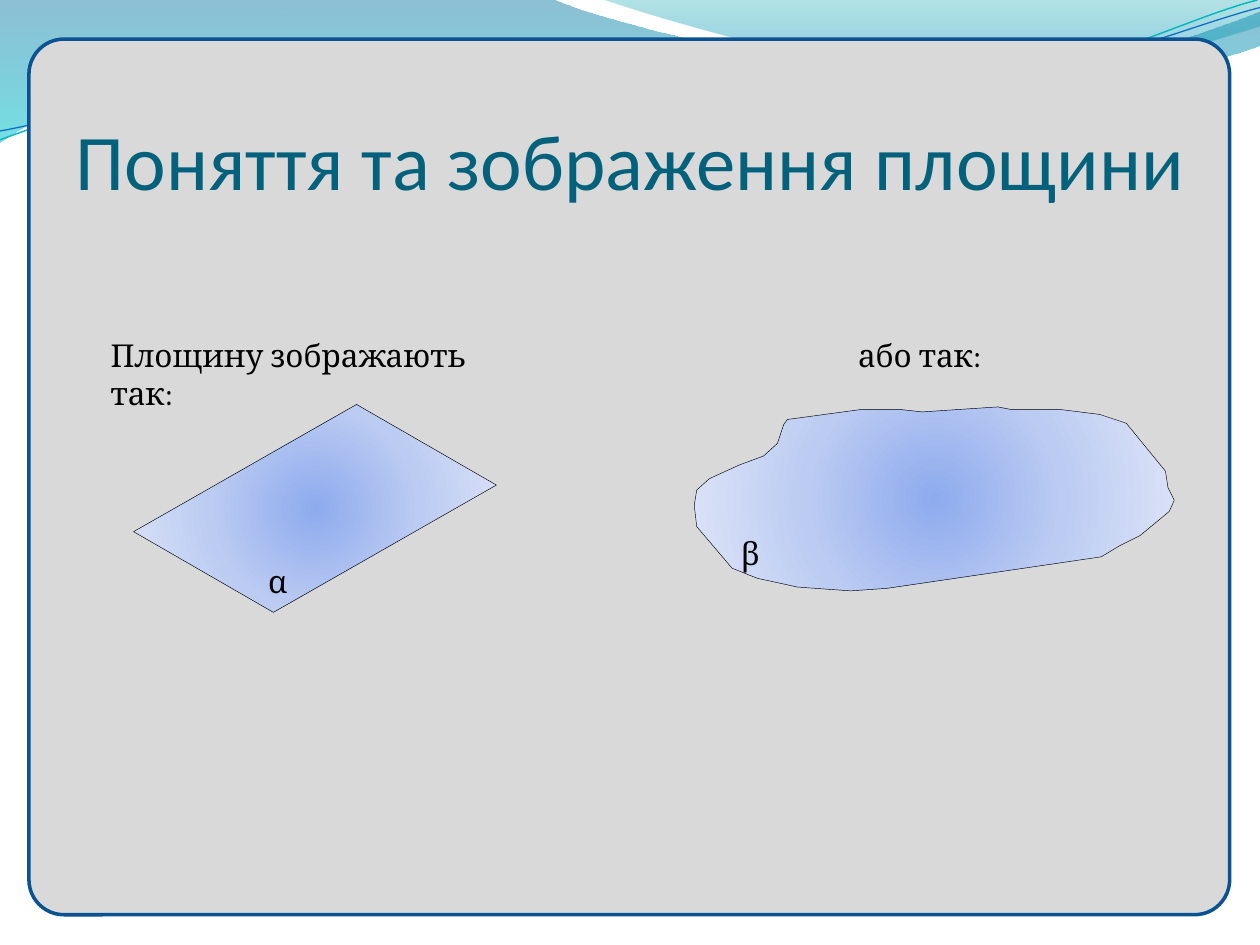
from dataclasses import dataclass

from lxml.etree import SubElement as Sub
from pptx import Presentation
from pptx.dml.color import RGBColor as Rgb
from pptx.enum.shapes import MSO_SHAPE as Kind
from pptx.enum.text import MSO_ANCHOR as Anchor, PP_ALIGN as Align
from pptx.oxml.ns import qn
from pptx.util import Inches, Pt

Point = tuple[float, float]
Stop = tuple[int, str, int]


@dataclass(frozen=True)
class Theme:
    panel: str = "D9D9D9"
    frame: str = "0B5292"
    title: str = "04617B"
    ink: str = "000000"
    teal: str = "0AB8BF"
    blue: str = "0F6FC6"
    deep: tuple[Stop, ...] = ((0, "0074A1", 45), (100, "00C6CF", 55))
    pale: tuple[Stop, ...] = ((0, "00A1A9", 30), (80, "008BBF", 45))
    plane: tuple[Stop, ...] = ((0, "8EABEE", 100), (50, "BBCBF2", 100), (100, "DEE5F8", 100))
    head: str = "Calibri"
    body: str = "Cambria"
    large: int = 45
    small: int = 18


@dataclass(frozen=True)
class Grid:
    width: int
    height: int
    cols: float = 10
    rows: float = 7.5

    def x(self, col: float) -> int:
        return round(self.width * col / self.cols)

    def y(self, row: float) -> int:
        return round(self.height * row / self.rows)


@dataclass(frozen=True)
class Form:
    points: list[Point]
    stops: tuple[Stop, ...] = ()
    round: bool = False
    line: str = ""
    weight: float = 0.25


@dataclass(frozen=True)
class Label:
    text: str
    col: float
    row: float
    wide: float
    high: float
    align: Align = Align.LEFT


def bend(*knots: Point, steps: int = 24) -> list[Point]:
    out = [knots[0]]
    for i in range(0, len(knots) - 3, 3):
        a, b, c, d = knots[i:i + 4]
        for n in range(1, steps + 1):
            t = n / steps
            u = 1 - t
            out.append(tuple(
                u**3 * a[k] + 3 * u * u * t * b[k] + 3 * u * t * t * c[k] + t**3 * d[k]
                for k in (0, 1)))
    return out


def shade(shape, stops: tuple[Stop, ...], radial: bool) -> None:
    shape.fill.gradient()
    grad = shape._element.spPr.find(qn("a:gradFill"))
    for child in list(grad):
        grad.remove(child)
    group = Sub(grad, qn("a:gsLst"))
    for spot, tint, alpha in stops:
        stop = Sub(group, qn("a:gs"), pos=str(spot * 1000))
        tone = Sub(stop, qn("a:srgbClr"), val=tint)
        if alpha < 100:
            Sub(tone, qn("a:alpha"), val=str(alpha * 1000))
    if radial:
        way = Sub(grad, qn("a:path"), {"path": "circle"})
        Sub(way, qn("a:fillToRect"), dict.fromkeys("ltrb", "50000"))
    else:
        Sub(grad, qn("a:lin"), ang="5400000", scaled="0")


def draw(slide, grid: Grid, form: Form) -> None:
    spots = [(grid.x(c), grid.y(r)) for c, r in form.points]
    pen = slide.shapes.build_freeform(*spots[0], scale=1.0)
    pen.add_line_segments(spots[1:], close=bool(form.stops))
    shape = pen.convert_to_shape()
    shape.shadow.inherit = False
    if form.stops:
        shade(shape, form.stops, form.round)
    else:
        shape.fill.background()
    if form.line:
        shape.line.color.rgb = Rgb.from_string(form.line)
        shape.line.width = Pt(form.weight)
    else:
        shape.line.fill.background()


def panel(slide, grid: Grid, theme: Theme) -> None:
    card = slide.shapes.add_shape(
        Kind.ROUNDED_RECTANGLE, grid.x(0.23), grid.y(0.31), grid.x(9.53), grid.y(6.95))
    card.adjustments[0] = 0.04
    card.shadow.inherit = False
    card.fill.solid()
    card.fill.fore_color.rgb = Rgb.from_string(theme.panel)
    card.line.color.rgb = Rgb.from_string(theme.frame)
    card.line.width = Pt(2)


def write(slide, grid: Grid, label: Label, font: str, size: int, tint: str):
    box = slide.shapes.add_textbox(
        grid.x(label.col), grid.y(label.row), grid.x(label.wide), grid.y(label.high))
    frame = box.text_frame
    frame.word_wrap = True
    para = frame.paragraphs[0]
    para.alignment = label.align
    run = para.add_run()
    run.text = label.text
    run.font.name = font
    run.font.size = Pt(size)
    run.font.color.rgb = Rgb.from_string(tint)
    return frame


def main() -> None:
    theme = Theme()
    deck = Presentation()
    deck.slide_width, deck.slide_height = Inches(10), Inches(7.5)
    grid = Grid(deck.slide_width, deck.slide_height)
    slide = deck.slides.add_slide(deck.slide_layouts[6])

    waves = [
        Form([(0, 0),
              *bend((4.4, 0), (4.76, 0.17), (6.64, 0.63), (7.58, 0.63),
                    (8.53, 0.63), (9.58, 0.26), (10, 0.09)),
              *bend((10, 0.36), (9.83, 0.44), (8.7, 0.76), (7.46, 0.75),
                    (6.22, 0.75), (3.82, 0.28), (2.57, 0.34),
                    (1.29, 0.36), (0.46, 0.83), (0, 1.13))], theme.deep),
        Form([*bend((4.79, 0), (5.09, 0.11), (6.82, 0.62), (7.69, 0.65),
                    (8.56, 0.69), (9.61, 0.32), (10, 0.21)), (10, 0)], theme.pale),
        Form(bend((0, 1.11), (0.48, 0.93), (1.58, 0.57), (2.77, 0.52),
                  (3.95, 0.47), (5.93, 0.89), (7.13, 0.8),
                  (8.33, 0.71), (9.38, 0.15), (9.98, 0)), line=theme.teal, weight=0.85),
        Form(bend((0, 1.04), (0.47, 0.96), (1.64, 0.61), (2.83, 0.56),
                  (4.03, 0.51), (5.97, 0.84), (7.17, 0.75),
                  (8.36, 0.67), (9.41, 0.21), (10, 0.06)), line=theme.blue, weight=0.75),
    ]
    alpha = [(1.06, 4.22), (2.83, 3.21), (3.94, 3.85), (2.17, 4.86)]
    beta = [
        (6.25, 3.33), (6.84, 3.25), (7.14, 3.25), (7.32, 3.27), (7.62, 3.25),
        (7.92, 3.23), (8.02, 3.25), (8.41, 3.25), (8.73, 3.29), (8.94, 3.36),
        (9.25, 3.74), (9.27, 3.87), (9.32, 3.97), (9.28, 4.06), (9.05, 4.25),
        (8.89, 4.33), (8.74, 4.42), (7.04, 4.67), (6.75, 4.69), (6.33, 4.66),
        (6.01, 4.59), (5.81, 4.51), (5.53, 4.18), (5.51, 4.01), (5.53, 3.89),
        (5.63, 3.8), (5.87, 3.69), (6.06, 3.62), (6.17, 3.52), (6.22, 3.37)]
    labels = [
        Label("Площину зображають так:", 0.78, 2.62, 3.2, 0.71),
        Label("α", 2.03, 4.41, 0.31, 0.4),
        Label("або так:", 5.7, 2.62, 3.2, 0.4, Align.CENTER),
        Label("β", 5.78, 4.19, 0.31, 0.4),
    ]

    for wave in waves:
        draw(slide, grid, wave)
    panel(slide, grid, theme)
    title = Label("Поняття та зображення площини", 0.5, 0.32, 9, 1.32, Align.CENTER)
    head = write(slide, grid, title, theme.head, theme.large, theme.title)
    head.vertical_anchor = Anchor.BOTTOM
    head.margin_left = head.margin_right = head.margin_bottom = 0
    for plane in (alpha, beta):
        draw(slide, grid, Form(plane, theme.plane, True, theme.ink))
    for label in labels:
        write(slide, grid, label, theme.body, theme.small, theme.ink)
    deck.save("out.pptx")


if __name__ == "__main__":
    main()
